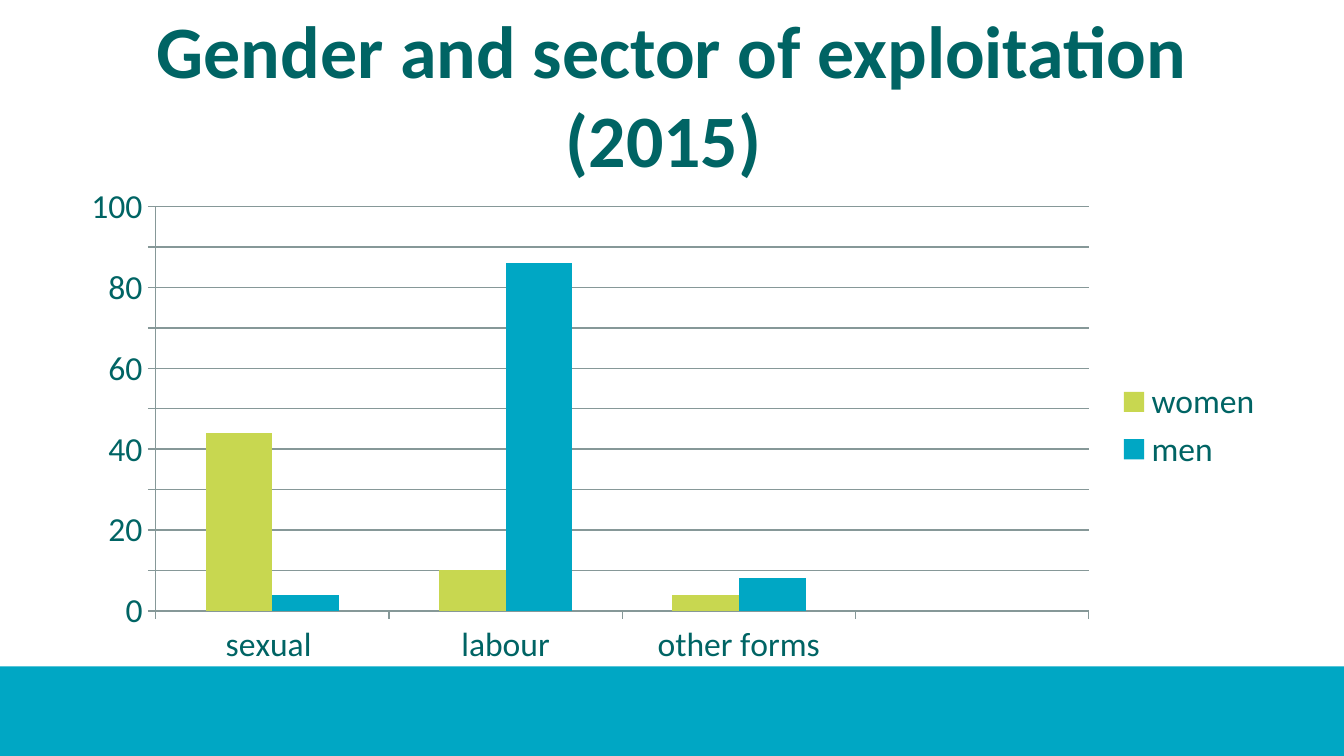
import pptx
import pptx.chart.data
import pptx.dml.color
import pptx.enum.chart
import pptx.enum.shapes
import pptx.enum.text
import pptx.util

Pt = pptx.util.Pt

TEAL = "006464"
CYAN = "00A7C4"
LIME = "C8D750"
GRID = "869898"


def color(hex_text):
    return pptx.dml.color.RGBColor.from_string(hex_text)


class SlideBuilder:
    """Holds the text style and the current page."""

    font_name = "Calibri"
    text_color = TEAL

    def __init__(self, page):
        self.page = page

    def style(self, font, size, bold=False):
        font.name = self.font_name
        font.size = Pt(size)
        font.bold = bold
        font.color.rgb = color(self.text_color)

    def band(self, left, top, width, height, fill):
        band = self.page.shapes.add_shape(
            pptx.enum.shapes.MSO_SHAPE.RECTANGLE,
            Pt(left), Pt(top), Pt(width), Pt(height))
        band.shadow.inherit = False
        band.fill.solid()
        band.fill.fore_color.rgb = color(fill)
        band.line.fill.background()

    def title(self, lines, left, top, width, height, size):
        box = self.page.shapes.title
        box.left, box.top, box.width, box.height = Pt(left), Pt(top), Pt(width), Pt(height)
        frame = box.text_frame
        frame.word_wrap = True
        frame.auto_size = pptx.enum.text.MSO_AUTO_SIZE.NONE
        frame.vertical_anchor = pptx.enum.text.MSO_ANCHOR.MIDDLE
        para = frame.paragraphs[0]
        para.alignment = pptx.enum.text.PP_ALIGN.CENTER
        for index, line in enumerate(lines):
            if index:
                para.add_line_break()
            span = para.add_run()
            span.text = line
            self.style(span.font, size, bold=True)

    def column_chart(self, categories, series, left, top, width, height, size):
        """Draw clustered columns; series maps a name to (values, fill)."""
        data = pptx.chart.data.CategoryChartData()
        data.categories = categories
        for name, (values, _) in series.items():
            data.add_series(name, values)
        chart = self.page.shapes.add_chart(
            pptx.enum.chart.XL_CHART_TYPE.COLUMN_CLUSTERED,
            Pt(left), Pt(top), Pt(width), Pt(height), data).chart
        self.style(chart.font, size)
        chart.has_title = False
        chart.has_legend = True
        chart.legend.position = pptx.enum.chart.XL_LEGEND_POSITION.RIGHT
        chart.legend.include_in_layout = False

        plot = chart.plots[0]
        plot.gap_width = 150
        plot.overlap = 0
        plot.vary_by_categories = False
        for columns, (_, fill) in zip(plot.series, series.values()):
            columns.format.fill.solid()
            columns.format.fill.fore_color.rgb = color(fill)

        values_axis = chart.value_axis
        values_axis.minimum_scale = 0
        values_axis.maximum_scale = 100
        values_axis.major_unit = 10
        values_axis.has_major_gridlines = True
        for axis in (chart.category_axis, values_axis):
            axis.major_tick_mark = pptx.enum.chart.XL_TICK_MARK.OUTSIDE
            axis.minor_tick_mark = pptx.enum.chart.XL_TICK_MARK.NONE
        for lined in (chart.category_axis, values_axis, values_axis.major_gridlines):
            lined.format.line.color.rgb = color(GRID)
            lined.format.line.width = Pt(0.75)


def main():
    deck = pptx.Presentation()
    deck.slide_width, deck.slide_height = Pt(720), Pt(405)
    builder = SlideBuilder(deck.slides.add_slide(deck.slide_layouts[5]))
    builder.band(0, 357, 720, 48, CYAN)
    builder.title(["Gender and sector of exploitation", "(2015) "],
                  36, 16.5, 648, 67.5, size=39.6)
    builder.column_chart(
        ["sexual ", "labour", "other forms", ""],
        {"women": ([44, 10, 4, None], LIME), "men": ([4, 86, 8, None], CYAN)},
        36, 94.5, 648, 267, size=18)
    deck.save("out.pptx")


if __name__ == "__main__":
    main()
